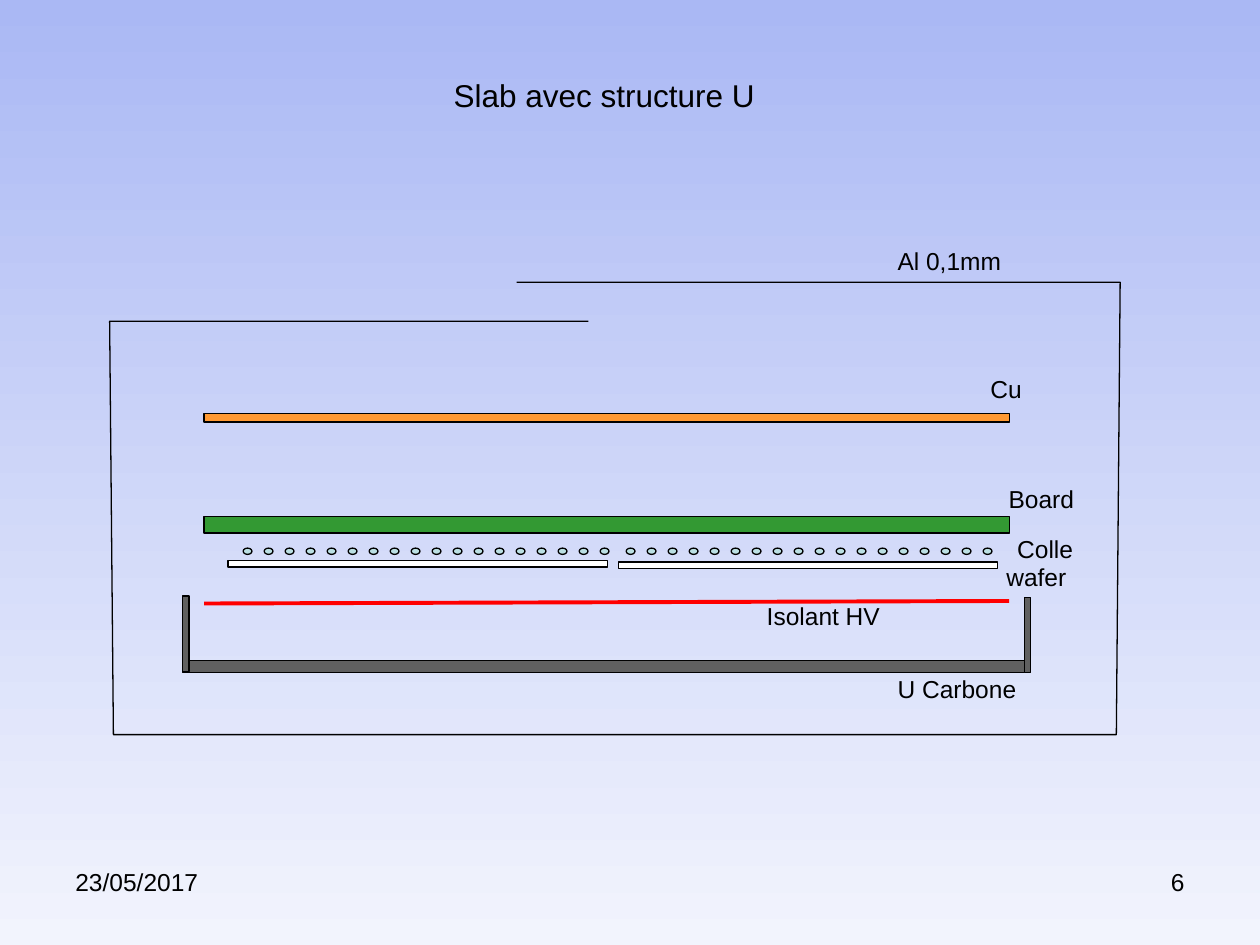
from pptx import Presentation
from pptx.dml.color import RGBColor
from pptx.enum.shapes import MSO_CONNECTOR, MSO_SHAPE
from pptx.enum.text import MSO_ANCHOR, PP_ALIGN
from pptx.oxml.ns import qn
from pptx.util import Inches, Pt

BLACK = RGBColor(0x00, 0x00, 0x00)
WHITE = RGBColor(0xFF, 0xFF, 0xFF)
RED = RGBColor(0xFF, 0x00, 0x00)
CARBON = RGBColor(0x60, 0x60, 0x60)
GREEN = RGBColor(0x33, 0x99, 0x33)
COPPER = RGBColor(0xFF, 0x99, 0x33)
GLUE = RGBColor(0xBB, 0xE0, 0xE3)
SKY_TOP = RGBColor(0xAA, 0xB8, 0xF4)
SKY_BOTTOM = RGBColor(0xF2, 0xF4, 0xFD)

# Content, in inches
TITLE = "Slab avec structure U"
FOOTERS = [("23/05/2017", 0.5, PP_ALIGN.LEFT), ("6", 7.17, PP_ALIGN.RIGHT)]
LABELS = [  # text, left, top
    ("U Carbone", 6.54, 5.3),
    ("Isolant HV", 5.48, 4.72),
    ("wafer", 7.17, 4.41),
    ("Colle", 7.24, 4.19),
    ("Board", 7.21, 3.79),
    ("Cu", 6.93, 2.92),
    ("Al 0,1mm", 6.48, 1.9),
]
LAYERS = [  # left, top, width, height, fill
    (1.45, 5.24, 6.72, 0.1, CARBON),
    (1.62, 4.1, 6.39, 0.13, GREEN),
    (1.62, 3.28, 6.39, 0.07, COPPER),
    (1.81, 4.45, 3.01, 0.05, WHITE),
    (4.91, 4.46, 3.01, 0.05, WHITE),
]
CARBON_WALLS = [(1.45, 4.73, 0.05, 0.6, CARBON), (8.13, 4.74, 0.05, 0.6, CARBON)]
ALUMINIUM = [(4.67, 2.55), (0.87, 2.55), (0.9, 5.83), (8.86, 5.83), (8.89, 2.24), (4.1, 2.24)]
HV_FILM = [(1.62, 4.79), (8.01, 4.77)]
GLUE_ROWS = [1.93, 4.97]  # left of the first dot above each wafer
DOTS_PER_ROW = 18
DOT_PITCH = 1 / 6

prs = Presentation()
prs.slide_width, prs.slide_height = Inches(10), Inches(7.5)
slide = prs.slides.add_slide(prs.slide_layouts[5])
shapes = slide.shapes


def outline(shape):
    shape.shadow.inherit = False
    shape.line.color.rgb = BLACK
    shape.line.width = Pt(0.75)


def add_part(kind, left, top, width, height, fill):
    part = shapes.add_shape(kind, *map(Inches, (left, top, width, height)))
    part.fill.solid()
    part.fill.fore_color.rgb = fill
    outline(part)


def write(shape, text, size, align):
    frame = shape.text_frame
    frame.word_wrap = True
    frame.vertical_anchor = MSO_ANCHOR.TOP
    frame.text = text
    paragraph = frame.paragraphs[0]
    paragraph.alignment = align
    paragraph.font.name = "Arial"
    paragraph.font.size = Pt(size)
    paragraph.font.color.rgb = BLACK


def add_label(text, left, top, width, height, align):
    box = shapes.add_textbox(*map(Inches, (left, top, width, height)))
    write(box, text, 14, align)


# Background
background = slide.background.fill
background.gradient()
background.gradient_angle = 270
for stop, color, position in zip(background.gradient_stops, (SKY_TOP, SKY_BOTTOM), (0, 1)):
    stop.color.rgb = color
    stop.position = position

# Title and footers
title = shapes.title
title.left, title.top, title.width, title.height = map(Inches, (2.17, 0.55, 5.25, 0.4))
write(title, TITLE, 18, PP_ALIGN.CENTER)
for text, left, align in FOOTERS:
    add_label(text, left, 6.83, 2.33, 0.52, align)

# Stacked layers
for layer in LAYERS:
    add_part(MSO_SHAPE.RECTANGLE, *layer)

# Open aluminium wrap
corners = [(Inches(x), Inches(y)) for x, y in ALUMINIUM]
builder = shapes.build_freeform(*corners[0])
builder.add_line_segments(corners[1:], close=False)
wrap = builder.convert_to_shape()
wrap.fill.background()
outline(wrap)

# High-voltage film
start, end = HV_FILM
film = shapes.add_connector(MSO_CONNECTOR.STRAIGHT, *map(Inches, start + end))
film.line.color.rgb = RED
film.line.width = Pt(2.25)
properties = film._element.spPr
properties.append(properties.makeelement(qn("a:effectLst"), {}))

# Glue dots
for first in GLUE_ROWS:
    for column in range(DOTS_PER_ROW):
        add_part(MSO_SHAPE.OVAL, first + column * DOT_PITCH, 4.35, 0.07, 0.05, GLUE)

# Labels and carbon walls
for text, left, top in LABELS:
    add_label(text, left, top, 2.11, 0.34, PP_ALIGN.CENTER)
for wall in CARBON_WALLS:
    add_part(MSO_SHAPE.RECTANGLE, *wall)

prs.save("out.pptx")
